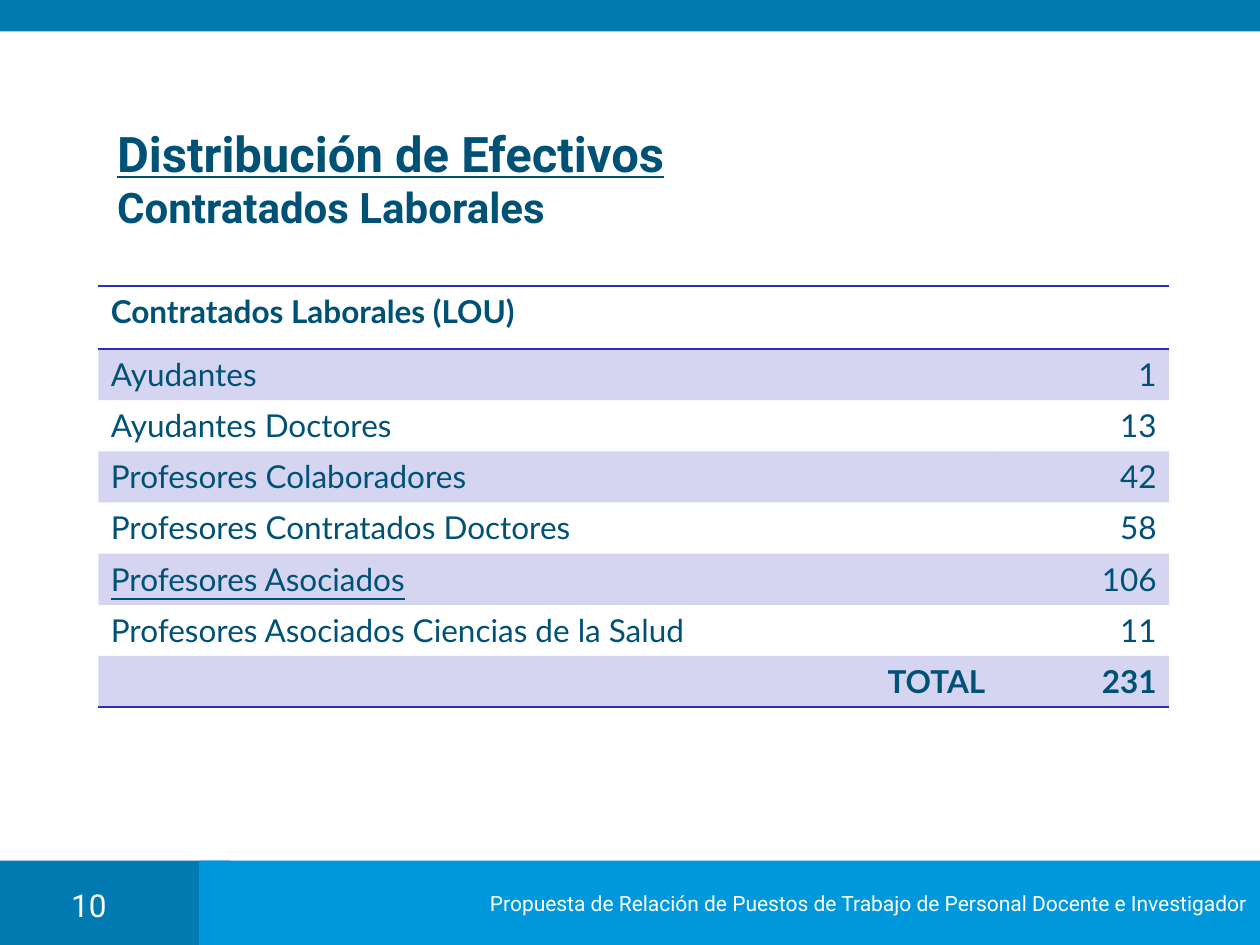
from lxml.etree import SubElement
from pptx import Presentation
from pptx.dml.color import RGBColor
from pptx.enum.shapes import MSO_SHAPE
from pptx.enum.text import MSO_ANCHOR, MSO_AUTO_SIZE, PP_ALIGN
from pptx.oxml.ns import qn
from pptx.util import Inches, Pt

DARK, LIGHT, NAVY, RULE, WHITE = "007AB1", "0098DC", "005176", "2D2DB9", "FFFFFF"
NO_STYLE = "{2D5ABB26-0587-4C30-8999-92F81FD0307C}"
HEADER = "Contratados Laborales (LOU)"
STAFF = [
    ("Ayudantes", 1),
    ("Ayudantes Doctores", 13),
    ("Profesores Colaboradores", 42),
    ("Profesores Contratados Doctores", 58),
    ("Profesores Asociados", 106),
    ("Profesores Asociados Ciencias de la Salud", 11),
]
UNDERLINED = "Profesores Asociados"


def rgb(color):
    return RGBColor.from_string(color)


def add_text(p, text, size=18, font="Lato", color=NAVY, bold=False,
             underline=False, align=PP_ALIGN.LEFT):
    p.alignment = align
    r = p.add_run()
    r.text = text
    f = r.font
    f.size, f.name, f.bold, f.underline = Pt(size), font, bold, underline
    f.color.rgb = rgb(color)


def add_band(s, left, top, width, height, color):
    sp = s.shapes.add_shape(MSO_SHAPE.RECTANGLE, *map(Inches, (left, top, width, height)))
    sp.shadow.inherit = False
    sp.fill.solid()
    sp.fill.fore_color.rgb = rgb(color)
    sp.line.fill.background()
    return sp


def add_frame(s, page):
    """Top band, footer bands with the document name, and the page number."""
    add_band(s, 0, 6.83, 1.83, 0.67, DARK)
    footer = add_band(s, 1.58, 6.83, 8.42, 0.67, LIGHT)
    add_band(s, 0, 0, 10, 0.25, DARK)
    tf = footer.text_frame
    tf.word_wrap = False
    tf.vertical_anchor = MSO_ANCHOR.MIDDLE
    add_text(tf.paragraphs[0],
             "Propuesta de Relación de Puestos de Trabajo de Personal Docente e Investigador",
             size=12, font="Roboto", color=WHITE, align=PP_ALIGN.RIGHT)
    tf = s.shapes.add_textbox(*map(Inches, (0.35, 6.98, 0.71, 0.32))).text_frame
    tf.word_wrap = True
    add_text(tf.paragraphs[0], page, font="Roboto", color=WHITE, align=PP_ALIGN.CENTER)


def set_title(s, heading, subheading):
    sp = s.shapes.title
    sp.left, sp.top, sp.width, sp.height = map(Inches, (0.83, 1.2, 8.35, 0.42))
    tf = sp.text_frame
    tf.auto_size = MSO_AUTO_SIZE.NONE
    tf.vertical_anchor = MSO_ANCHOR.MIDDLE
    p = tf.paragraphs[0]
    add_text(p, heading, size=28, font="Roboto", bold=True, underline=True)
    p.add_line_break()
    add_text(p, subheading, size=24, font="Roboto", bold=True)


def add_border(cell, side):
    ln = SubElement(cell._tc.get_or_add_tcPr(), qn(f"a:ln{side}"), w=str(Pt(1)))
    SubElement(SubElement(ln, qn("a:solidFill")), qn("a:srgbClr"), val=RULE)


def shade(cell):
    """Fill the cell with the rule colour at 20 % opacity."""
    cell.fill.solid()
    cell.fill.fore_color.rgb = rgb(RULE)
    color = cell._tc.tcPr.find(qn("a:solidFill")).find(qn("a:srgbClr"))
    SubElement(color, qn("a:alpha"), val="20000")


def add_staff_table(s):
    total = sum(count for _, count in STAFF)
    rows = [(HEADER, ""), *STAFF, ("TOTAL", total)]
    last = len(rows) - 1
    table = s.shapes.add_table(len(rows), 2, *map(Inches, (0.78, 2.27, 8.5, 3.34))).table
    table.first_row = table.horz_banding = False
    table._tbl.tblPr.find(qn("a:tableStyleId")).text = NO_STYLE
    for column, width in zip(table.columns, (7.14, 1.36)):
        column.width = Inches(width)

    for i, values in enumerate(rows):
        table.rows[i].height = Inches(0.406 if i else 0.5)
        sides = {0: "TB", last: "B"}.get(i, "")
        for j, value in enumerate(values):
            cell = table.cell(i, j)
            for side in sides:
                add_border(cell, side)
            if i % 2:
                shade(cell)
            else:
                cell.fill.background()
            if value != "":
                add_text(cell.text_frame.paragraphs[0], str(value),
                         bold=i in (0, last), underline=value == UNDERLINED,
                         align=PP_ALIGN.RIGHT if j or i == last else PP_ALIGN.LEFT)


def main():
    prs = Presentation()
    prs.slide_width, prs.slide_height = Inches(10), Inches(7.5)
    s = prs.slides.add_slide(prs.slide_layouts[5])
    add_frame(s, "10")
    set_title(s, "Distribución de Efectivos", "Contratados Laborales")
    add_staff_table(s)
    prs.save("out.pptx")


if __name__ == "__main__":
    main()
